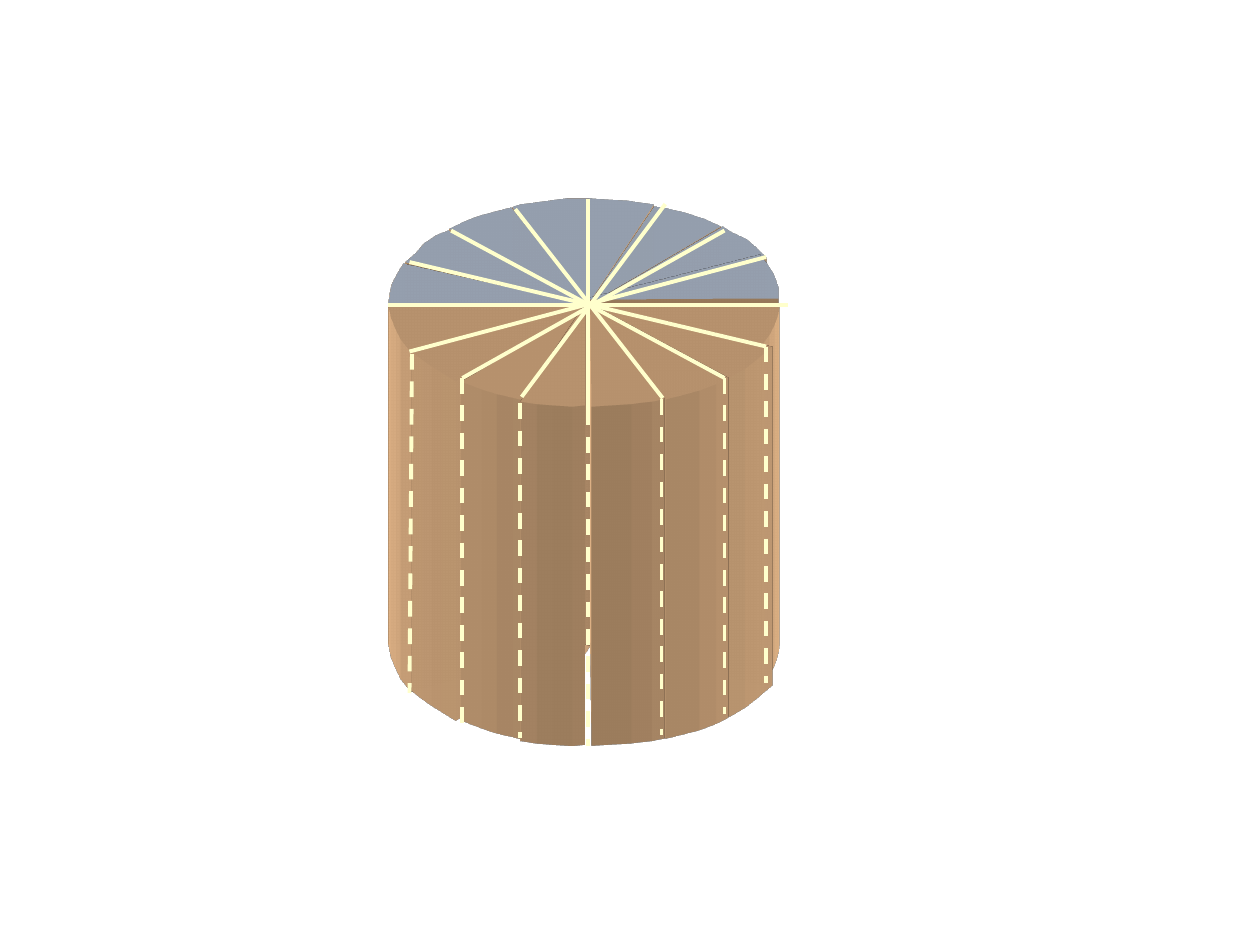
from dataclasses import dataclass

from lxml import etree
from pptx import Presentation
from pptx.dml.color import RGBColor
from pptx.enum import dml, shapes
from pptx.oxml import ns, parse_xml
from pptx.util import Inches, Pt

Point = tuple[float, float]

BLUE = RGBColor(0xCF, 0xDE, 0xF3)
TAN = RGBColor(0xFF, 0xCC, 0x99)
CREAM = RGBColor(0xFF, 0xFF, 0xCC)
DEPTH = Inches(5.38)


@dataclass(frozen=True)
class Wedge:
    fill: RGBColor
    outline: tuple[Point, ...]


@dataclass(frozen=True)
class Cut:
    start: Point
    end: Point
    dashed: bool = False


WEDGES = (
    Wedge(BLUE, ((4.67, 1.58), (4.67, 2.42), (5.19, 1.63), (4.98, 1.6), (4.83, 1.59))),
    Wedge(BLUE, ((4.07, 1.65), (4.67, 2.42), (4.67, 1.58), (4.5, 1.58), (4.35, 1.6),
                 (4.2, 1.62), (4.13, 1.63))),
    Wedge(BLUE, ((3.57, 1.82), (4.67, 2.42), (4.06, 1.65), (3.94, 1.68), (3.8, 1.72),
                 (3.69, 1.76))),
    Wedge(BLUE, ((4.67, 2.42), (3.22, 2.08), (3.3, 2.01), (3.37, 1.93), (3.46, 1.87),
                 (3.56, 1.83))),
    Wedge(BLUE, ((3.08, 2.42), (4.67, 2.42), (3.2, 2.09), (3.15, 2.17), (3.11, 2.25),
                 (3.09, 2.33))),
    Wedge(TAN, ((3.26, 2.8), (4.67, 2.42), (3.08, 2.42), (3.1, 2.52), (3.14, 2.62),
                (3.18, 2.7))),
    Wedge(TAN, ((3.62, 3.03), (4.67, 2.41), (3.27, 2.79), (3.36, 2.86), (3.43, 2.91),
                (3.51, 2.96))),
    Wedge(TAN, ((3.66, 3.03), (4.7, 2.41), (4.19, 3.19), (4.07, 3.16), (3.94, 3.13),
                (3.82, 3.09))),
    Wedge(BLUE, ((4.67, 2.42), (5.19, 1.64), (5.26, 1.65), (5.44, 1.69), (5.59, 1.74),
                 (5.72, 1.8))),
    Wedge(BLUE, ((4.67, 2.42), (5.73, 1.8), (5.81, 1.85), (5.92, 1.9), (6, 1.97),
                 (6.08, 2.05))),
    Wedge(BLUE, ((4.61, 2.38), (6.03, 2.02), (6.08, 2.08), (6.14, 2.18), (6.18, 2.29),
                 (6.18, 2.37))),
    Wedge(TAN, ((4.61, 2.41), (6.19, 2.41), (6.18, 2.49), (6.15, 2.58), (6.11, 2.66),
                (6.05, 2.74))),
    Wedge(TAN, ((4.69, 2.41), (6.13, 2.75), (6.07, 2.8), (6, 2.86), (5.91, 2.93),
                (5.79, 3))),
    Wedge(TAN, ((4.69, 2.41), (5.78, 3), (5.68, 3.05), (5.55, 3.1), (5.4, 3.14),
                (5.28, 3.17))),
    Wedge(TAN, ((4.69, 2.41), (4.7, 3.23), (4.86, 3.22), (5.01, 3.21), (5.17, 3.19),
                (5.27, 3.17))),
    Wedge(TAN, ((4.64, 2.41), (4.13, 3.19), (4.26, 3.21), (4.38, 3.22), (4.54, 3.23),
                (4.64, 3.22))),
)

CUTS = (
    Cut((3.08, 2.42), (6.25, 2.42)),
    Cut((4.67, 1.58), (4.67, 3.25)),
    Cut((3.25, 2.08), (6.08, 2.75)),
    Cut((3.58, 1.83), (5.75, 3)),
    Cut((4.09, 1.66), (5.26, 3.16)),
    Cut((3.25, 2.79), (6.08, 2.04)),
    Cut((3.67, 3), (5.75, 1.83)),
    Cut((3.27, 2.81), (3.25, 5.5), True),
    Cut((3.67, 3), (3.67, 5.75), True),
    Cut((4.13, 3.2), (4.13, 5.86), True),
    Cut((4.67, 3.25), (4.67, 5.92), True),
    Cut((5.25, 3.17), (5.25, 5.83), True),
    Cut((5.75, 3), (5.75, 5.67), True),
    Cut((6.08, 2.75), (6.08, 5.42), True),
    Cut((5.28, 1.62), (4.14, 3.15)),
)


def extrude_down(shape) -> None:
    scene = (
        f'<a:scene3d {ns.nsdecls("a")}><a:camera prst="legacyObliqueBottom"/>'
        '<a:lightRig rig="legacyFlat3" dir="t"/></a:scene3d>'
    )
    solid = (
        f'<a:sp3d {ns.nsdecls("a")} extrusionH="{DEPTH}" prstMaterial="legacyMatte">'
        f'<a:extrusionClr><a:srgbClr val="{TAN}"/></a:extrusionClr></a:sp3d>'
    )
    for xml in (scene, solid):
        shape._element.spPr.append(parse_xml(xml))


def draw_wedge(slide, wedge: Wedge) -> None:
    first, *rest = [(Inches(x), Inches(y)) for x, y in wedge.outline]
    builder = slide.shapes.build_freeform(*first)
    builder.add_line_segments(rest, close=True)
    shape = builder.convert_to_shape()
    shape.fill.solid()
    shape.fill.fore_color.rgb = wedge.fill
    shape.line.fill.background()
    shape.shadow.inherit = False
    extrude_down(shape)


def draw_cut(slide, cut: Cut) -> None:
    ends = [Inches(value) for value in (*cut.start, *cut.end)]
    connector = slide.shapes.add_connector(shapes.MSO_CONNECTOR.STRAIGHT, *ends)
    connector.line.color.rgb = CREAM
    connector.line.width = Pt(2.25)
    if cut.dashed:
        connector.line.dash_style = dml.MSO_LINE.DASH
    etree.SubElement(connector._element.spPr, ns.qn("a:effectLst"))


def main() -> None:
    deck = Presentation()
    deck.slide_width, deck.slide_height = Inches(10), Inches(7.5)
    slide = deck.slides.add_slide(deck.slide_layouts[6])
    for wedge in WEDGES:
        draw_wedge(slide, wedge)
    for cut in CUTS:
        draw_cut(slide, cut)
    deck.save("out.pptx")


if __name__ == "__main__":
    main()
